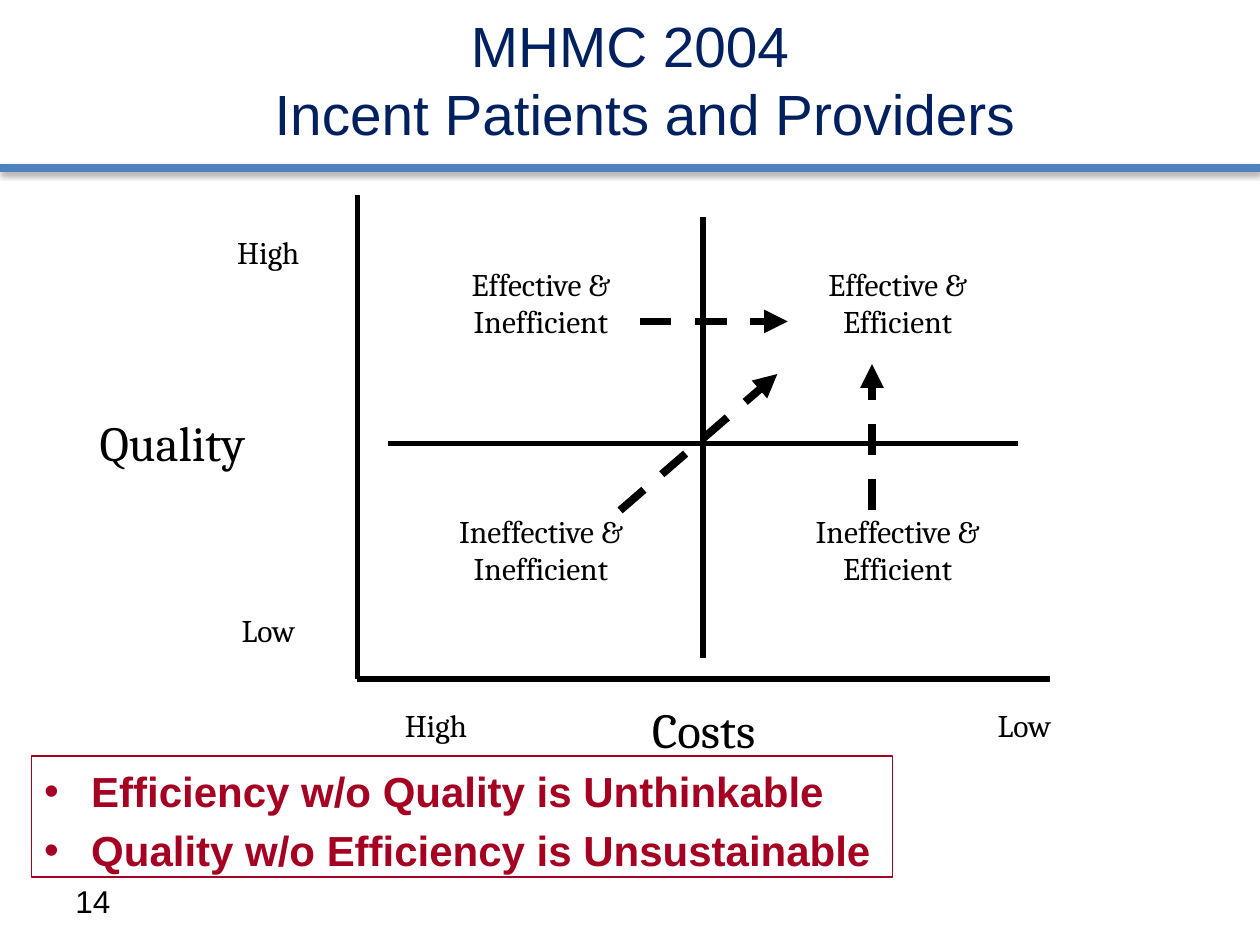
from lxml import etree
from pptx import Presentation
from pptx.dml.color import RGBColor
from pptx.enum.dml import MSO_LINE
from pptx.enum.shapes import MSO_CONNECTOR, MSO_SHAPE
from pptx.enum.text import MSO_ANCHOR, PP_ALIGN
from pptx.oxml.ns import qn
from pptx.util import Cm, Pt

BLACK = RGBColor(0x00, 0x00, 0x00)
NAVY = RGBColor(0x00, 0x20, 0x60)
BLUE = RGBColor(0x4F, 0x81, 0xBD)
CRIMSON = RGBColor(0xA5, 0x00, 0x21)
SANS, SERIF = "Arial", "Cambria"
STRAIGHT, RECTANGLE = MSO_CONNECTOR.STRAIGHT, MSO_SHAPE.RECTANGLE
LEFT, CENTER = PP_ALIGN.LEFT, PP_ALIGN.CENTER
TOP, MIDDLE = MSO_ANCHOR.TOP, MSO_ANCHOR.MIDDLE
DASH = MSO_LINE.DASH


class SlideBuilder:
    def __init__(self, slide):
        self.shapes = slide.shapes

    def fill_text(self, tf, text, size, font=SERIF, color=BLACK, align=CENTER,
                  anchor=TOP, bold=False):
        tf.word_wrap = True
        tf.vertical_anchor = anchor
        tf.text = text
        for p in tf.paragraphs:
            p.alignment = align
            for r in p.runs:
                r.font.size = Pt(size)
                r.font.name = font
                r.font.bold = bold
                r.font.color.rgb = color

    def text(self, x, y, w, h, text, size, **style):
        box = self.shapes.add_textbox(Cm(x), Cm(y), Cm(w), Cm(h))
        self.fill_text(box.text_frame, text, size, **style)
        return box.text_frame

    def line(self, x1, y1, x2, y2, width=3, color=BLACK):
        """Draw a solid line; return it with its empty effect list."""
        line = self.shapes.add_connector(STRAIGHT, Cm(x1), Cm(y1), Cm(x2), Cm(y2))
        line.line.width = Pt(width)
        line.line.color.rgb = color
        effects = etree.SubElement(line._element.spPr, qn("a:effectLst"))
        return line, effects

    def header_rule(self, y, width):
        _, effects = self.line(0, y, width, y, 4.5, BLUE)
        shadow = etree.SubElement(effects, qn("a:outerShdw"), blurRad="40000",
                                  dist="23000", dir="5400000", rotWithShape="0")
        black = etree.SubElement(shadow, qn("a:srgbClr"), val="000000")
        etree.SubElement(black, qn("a:alpha"), val="35000")

    def arrow(self, x1, y1, x2, y2):
        line, _ = self.line(x1, y1, x2, y2, 4.5)
        line.line.dash_style = DASH
        ln = line._element.spPr.find(qn("a:ln"))
        etree.SubElement(ln, qn("a:tailEnd"), type="triangle")

    def bullet_box(self, x, y, w, h, items, size, indent):
        sp = self.shapes.add_shape(RECTANGLE, Cm(x), Cm(y), Cm(w), Cm(h))
        sp.shadow.inherit = False
        sp.fill.background()
        sp.line.color.rgb = CRIMSON
        sp.line.width = Pt(0.75)
        tf = sp.text_frame
        self.fill_text(tf, "\n".join(items), size, font=SANS, color=CRIMSON,
                       align=LEFT, bold=True)
        tf.margin_top = Cm(0.2)
        for p in tf.paragraphs:
            pPr = p._p.get_or_add_pPr()
            pPr.set("marL", str(Cm(indent)))
            pPr.set("indent", str(-Cm(indent)))
            etree.SubElement(pPr, qn("a:buFont"), typeface=SANS)
            etree.SubElement(pPr, qn("a:buChar"), char="•")
        for p in tf.paragraphs[1:]:
            p.space_before = Pt(0.2 * size)


def main():
    prs = Presentation()
    prs.slide_width, prs.slide_height = Cm(25.4), Cm(19.05)
    s = SlideBuilder(prs.slides.add_slide(prs.slide_layouts[6]))

    s.header_rule(3.38, 25.4)
    s.text(1.27, 17.65, 5.92, 1.02, "14", 18, font=SANS, align=LEFT)
    title = s.text(1.9, 0, 21.6, 3.18, "MHMC 2004\nIncent Patients and Providers",
                   32.4, font=SANS, color=NAVY, anchor=MIDDLE)
    title.paragraphs[1]._p.get_or_add_pPr().set("marL", str(Cm(0.6)))

    # Axes and the cross that divides the quadrants
    axis_x, axis_y, mid_x, mid_y = 7.2, 13.69, 14.17, 8.94
    s.line(axis_x, 3.94, axis_x, axis_y)
    s.line(21.16, axis_y, axis_x, axis_y)
    s.line(mid_x, 4.37, mid_x, 13.26)
    s.line(20.52, mid_y, 7.82, mid_y)

    # Axis names and their end labels
    s.text(1.47, 8.2, 4.01, 1.45, "Quality", 28)
    s.text(11.86, 13.97, 4.65, 1.45, "Costs", 28)
    for x, y, label in [(4.24, 4.57, "High"), (4.24, 12.19, "Low"),
                        (7.62, 14.1, "High"), (19.48, 14.1, "Low")]:
        s.text(x, y, 2.34, 1.09, label, 18)

    for y, quality in [(5.21, "Effective"), (10.19, "Ineffective")]:
        for x, cost in [(8.58, "Inefficient"), (15.77, "Efficient")]:
            s.text(x, y, 4.65, 1.96, f"{quality} & {cost}", 18)

    # Moves toward the effective and efficient quadrant
    s.arrow(12.5, 10.29, 15.67, 7.54)
    s.arrow(12.9, 6.48, 15.88, 6.48)
    s.arrow(17.58, 10.29, 17.58, 7.34)

    s.bullet_box(0.64, 15.24, 17.35, 2.44,
                 ["Efficiency w/o Quality is Unthinkable",
                  "Quality w/o Efficiency is Unsustainable"], 24, 0.95)
    prs.save("out.pptx")


if __name__ == "__main__":
    main()
